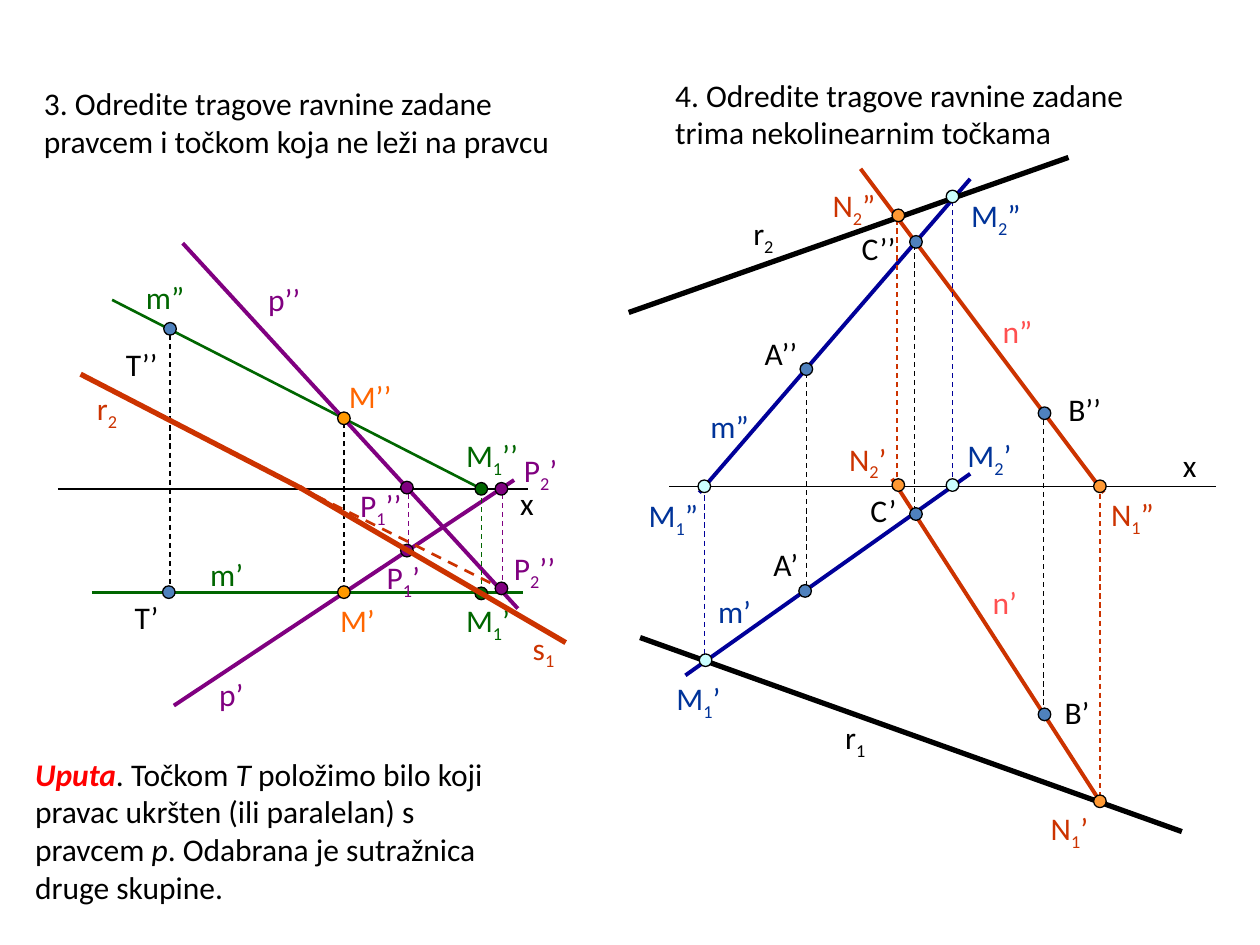
from dataclasses import dataclass
from lxml import etree
from pptx import Presentation
from pptx.dml.color import RGBColor
from pptx.enum.dml import MSO_LINE
from pptx.enum.shapes import MSO_CONNECTOR, MSO_SHAPE
from pptx.enum.text import MSO_AUTO_SIZE
from pptx.oxml.ns import qn
from pptx.util import Emu, Pt

DASH = MSO_LINE.DASH
STRAIGHT = MSO_CONNECTOR.STRAIGHT
OVAL = MSO_SHAPE.OVAL
FIT = MSO_AUTO_SIZE.SHAPE_TO_FIT_TEXT
SCALE = 9144  # EMU per px, 100 px to the inch


@dataclass(frozen=True)
class Theme:
    font: str = "Calibri"
    size: float = 18
    thin: float = 0.75
    mid: float = 1.5
    bold: float = 2.25
    trace: float = 3
    dot: int = 10
    row: int = 37
    black: str = "000000"
    red: str = "FF0000"
    green: str = "006600"
    purple: str = "800080"
    rust: str = "CC3300"
    coral: str = "FF5050"
    navy: str = "000099"
    blue: str = "003399"
    steel: str = "4F81BD"
    amber: str = "FF9900"
    orange: str = "FF6600"
    peach: str = "FF9933"
    ice: str = "CCFFFF"


T = Theme()


def px(n):
    return Emu(n * SCALE)


def rgb(code):
    return RGBColor.from_string(code)


def line(slide, x1, y1, x2, y2, color, width=T.thin, dash=None):
    """Straight line without a shadow."""
    item = slide.shapes.add_connector(STRAIGHT, px(x1), px(y1), px(x2), px(y2))
    item.line.color.rgb = rgb(color)
    item.line.width = Pt(width)
    if dash:
        item.line.dash_style = dash
    etree.SubElement(item._element.spPr, qn("a:effectLst"))


def dot(slide, x, y, color):
    """Outlined point centred on x, y."""
    half = T.dot // 2
    item = slide.shapes.add_shape(
        OVAL, px(x - half), px(y - half), px(T.dot), px(T.dot))
    item.shadow.inherit = False
    item.fill.solid()
    item.fill.fore_color.rgb = rgb(color)
    item.line.color.rgb = rgb(T.black)
    item.line.width = Pt(T.thin)


def run(para, words, color, bold=False, italic=False, sub=False):
    item = para.add_run()
    item.text = words
    font = item.font
    font.name, font.size = T.font, Pt(T.size)
    font.bold, font.italic = bold, italic
    font.color.rgb = rgb(color)
    if sub:
        item._r.get_or_add_rPr().set("baseline", "-25000")


def box(slide, x, y, w, h):
    """Empty text box; returns its first paragraph."""
    frame = slide.shapes.add_textbox(px(x), px(y), px(w), px(h)).text_frame
    frame.word_wrap = True
    frame.auto_size = FIT
    return frame.paragraphs[0]


def label(slide, x, y, w, name, color):
    """Point or line name; the sign after _ is a subscript."""
    para = box(slide, x, y, w, T.row)
    head, _, tail = name.partition("_")
    run(para, head, color)
    if tail:
        run(para, tail[0], color, sub=True)
    if tail[1:]:
        run(para, tail[1:], color)


def draw(slide, make, rows):
    for row in rows:
        make(slide, *row)


def texts(slide):
    # Task headings
    run(box(slide, 25, 62, 461, 71),
        "3. Odredite tragove ravnine zadane pravcem i točkom "
        "koja ne leži na pravcu", T.black)
    run(box(slide, 526, 55, 411, 71),
        "4. Odredite tragove ravnine zadane trima nekolinearnim točkama",
        T.black)
    # Hint
    hint = box(slide, 18, 594, 384, 90)
    run(hint, "Uputa", T.red, bold=True, italic=True)
    run(hint, ". Točkom ", T.black)
    run(hint, "T", T.black, italic=True)
    run(hint, " položimo bilo koji pravac ukršten (ili paralelan) "
              "s pravcem ", T.black)
    run(hint, "p", T.black, italic=True)
    run(hint, ". Odabrana je sutražnica druge skupine.", T.black)


def task3(slide):
    # Axis, lines m and p, ordinals
    draw(slide, line, [
        (89, 238, 384, 389, T.green, T.mid),
        (73, 470, 415, 470, T.green, T.mid),
        (46, 388, 419, 388, T.black),
        (145, 193, 411, 483, T.purple, T.bold),
        (408, 381, 138, 560, T.purple, T.bold),
        (135, 266, 135, 465, T.black, T.thin, DASH),
        (273, 469, 273, 331, T.black, T.thin, DASH),
        (382, 388, 382, 471, T.green, T.thin, DASH),
        (399, 392, 399, 465, T.purple, T.thin, DASH),
        (324, 392, 324, 435, T.purple, T.thin, DASH),
    ])
    # Points
    draw(slide, dot, [
        (135, 261, T.steel), (134, 470, T.steel),
        (273, 470, T.amber), (273, 332, T.amber),
        (382, 388, T.green), (382, 471, T.green),
        (398, 467, T.purple), (398, 388, T.purple),
        (323, 387, T.purple), (323, 437, T.purple),
    ])
    # Names
    draw(slide, label, [
        (106, 216, 51, "m”", T.green), (157, 436, 49, "m’", T.green),
        (203, 217, 67, "p’’", T.purple), (164, 531, 49, "p’", T.purple),
        (403, 379, 41, "x", T.black),
        (97, 470, 53, "T’", T.black), (90, 269, 51, "T’’", T.black),
        (260, 472, 61, "M’", T.orange), (267, 294, 62, "M’’", T.orange),
        (360, 341, 65, "M_1’’", T.green), (360, 472, 75, "M_1’", T.green),
        (398, 431, 58, "P_2’’", T.purple), (406, 353, 51, "P_2’", T.purple),
        (276, 381, 62, "P_1’’", T.purple), (297, 438, 51, "P_1’", T.purple),
        (413, 494, 40, "s_1", T.rust), (67, 304, 51, "r_2", T.rust),
    ])
    # Traces
    draw(slide, line, [
        (238, 387, 449, 510, T.rust, T.trace),
        (64, 297, 240, 388, T.rust, T.trace),
        (238, 387, 394, 465, T.rust, T.mid, DASH),
    ])


def task4(slide):
    # Lines n and m, axis, traces, ordinals
    draw(slide, line, [
        (683, 134, 876, 391, T.rust, T.bold),
        (708, 380, 873, 636, T.rust, T.bold),
        (770, 142, 555, 391, T.navy, T.bold),
        (770, 376, 544, 536, T.navy, T.bold),
        (531, 386, 965, 386, T.black),
        (508, 506, 938, 660, T.black, T.trace),
        (499, 248, 848, 125, T.black, T.trace),
        (640, 296, 640, 465, T.black, T.thin, DASH),
        (726, 194, 726, 406, T.black, T.thin, DASH),
        (828, 333, 828, 566, T.black, T.thin, DASH),
        (559, 386, 559, 526, T.navy, T.thin, DASH),
        (756, 386, 756, 157, T.navy, T.thin, DASH),
        (873, 385, 873, 635, T.rust, T.thin, DASH),
        (712, 386, 712, 173, T.rust, T.thin, DASH),
    ])
    # Points
    draw(slide, dot, [
        (640, 293, T.steel), (639, 469, T.steel),
        (727, 192, T.steel), (727, 408, T.steel),
        (829, 567, T.steel), (829, 328, T.steel),
        (559, 386, T.ice), (756, 156, T.ice),
        (756, 385, T.ice), (560, 524, T.ice),
        (873, 636, T.peach), (873, 386, T.peach),
        (713, 385, T.peach), (713, 171, T.peach),
    ])
    # Names
    draw(slide, label, [
        (786, 243, 51, "n”", T.coral), (778, 458, 45, "n’", T.coral),
        (554, 318, 56, "m”", T.blue), (560, 465, 59, "m’", T.blue),
        (929, 349, 54, "x", T.black),
        (604, 428, 47, "A’", T.black), (597, 260, 54, "A’’", T.black),
        (674, 177, 56, "C’’", T.black), (681, 385, 47, "C’", T.black),
        (835, 545, 49, "B’", T.black), (838, 305, 51, "B’’", T.black),
        (661, 565, 51, "r_1", T.black), (588, 165, 58, "r_2", T.black),
        (527, 534, 79, "M_1’", T.blue), (505, 389, 66, "M_1”", T.blue),
        (758, 341, 60, "M_2’", T.blue), (761, 151, 65, "M_2”", T.blue),
        (824, 637, 75, "N_1’", T.rust), (872, 388, 59, "N_1”", T.rust),
        (664, 344, 53, "N_2’", T.rust), (651, 143, 57, "N_2”", T.rust),
    ])


def main():
    deck = Presentation()
    deck.slide_width, deck.slide_height = px(1000), px(750)
    slide = deck.slides.add_slide(deck.slide_layouts[6])
    texts(slide)
    task3(slide)
    task4(slide)
    deck.save("out.pptx")


if __name__ == "__main__":
    main()
